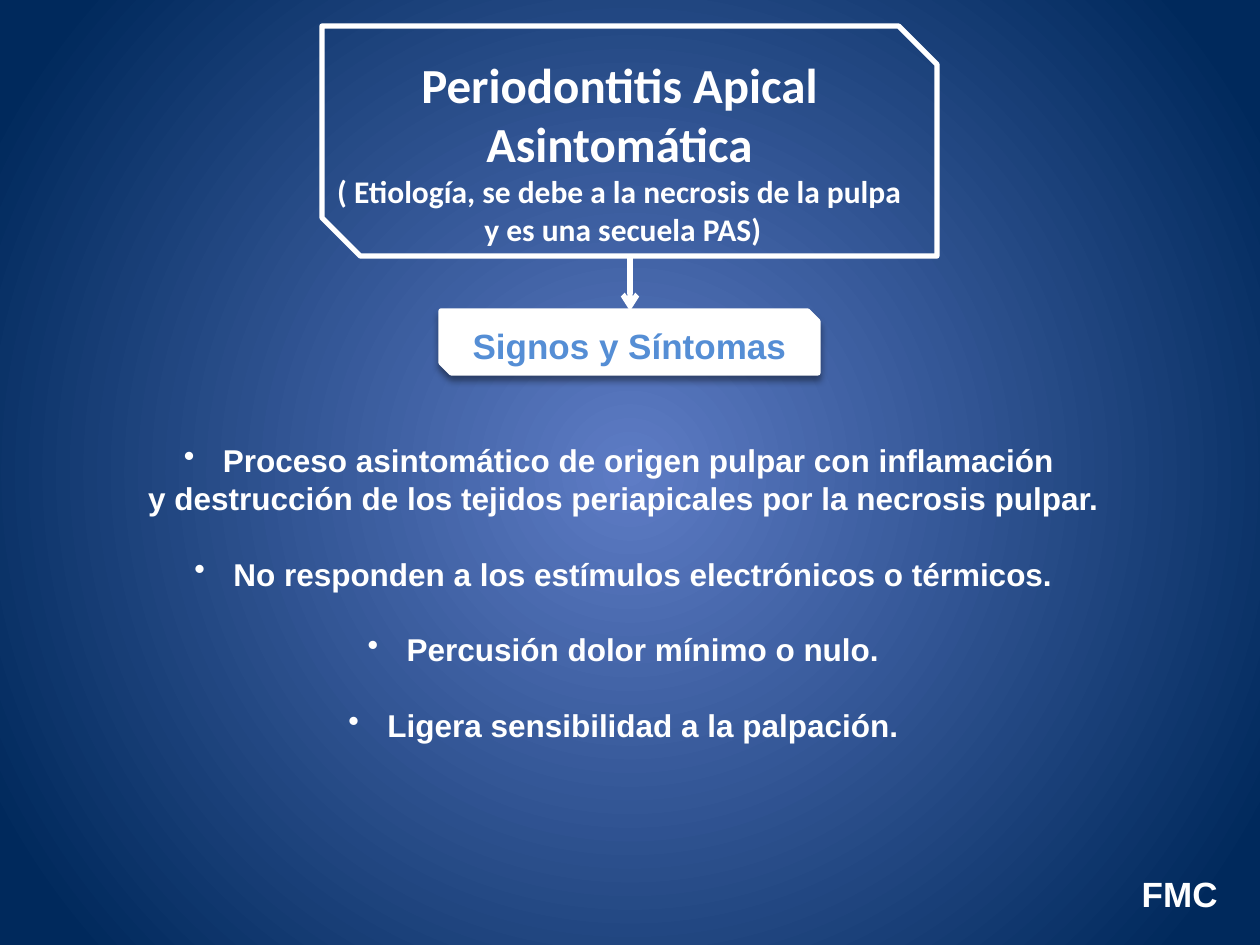
from lxml import etree
from pptx import Presentation
from pptx import util as u
from pptx.dml.color import RGBColor
from pptx.enum import shapes, text
from pptx.oxml import parse_xml
from pptx.oxml.ns import nsdecls, qn

WHITE = RGBColor(0xFF, 0xFF, 0xFF)
SKY = RGBColor(0x55, 0x8E, 0xD5)
GLOW = RGBColor(0x5E, 0x7C, 0xC5)
NAVY = RGBColor(0x00, 0x29, 0x5C)
PX_PER_INCH = 126
BULLET_INDENT = 39

CENTER = text.PP_ALIGN.CENTER
RIGHT = text.PP_ALIGN.RIGHT


def px(n):
    return u.Emu(round(n * u.Inches(1) / PX_PER_INCH))


class Deck:
    font = "Arial"
    color = WHITE
    line_width = u.Pt(3)

    def __init__(self, width, height):
        self.prs = Presentation()
        self.prs.slide_width, self.prs.slide_height = px(width), px(height)
        self.s = self.prs.slides.add_slide(self.prs.slide_layouts[6])

    def background(self, inner, outer, reach):
        fill = self.s.background.fill
        fill.gradient()
        for stop, color, position in zip(fill.gradient_stops, (inner, outer), (0, reach)):
            stop.color.rgb = color
            stop.position = position
        grad = self.s.background._cSld.find(".//" + qn("a:gradFill"))
        grad.replace(grad.find(qn("a:lin")), parse_xml(
            f'<a:path {nsdecls("a")} path="circle">'
            '<a:fillToRect l="50000" t="50000" r="50000" b="50000"/></a:path>'))

    def card(self, x, y, w, h, fill=None, shadow=False):
        sp = self.s.shapes.add_shape(
            shapes.MSO_SHAPE.SNIP_2_DIAG_RECTANGLE, px(x), px(y), px(w), px(h))
        sp.shadow.inherit = False
        if fill is None:
            sp.fill.background()
        else:
            sp.fill.solid()
            sp.fill.fore_color.rgb = fill
        sp.line.color.rgb = self.color
        sp.line.width = self.line_width
        if shadow:
            effects = sp._element.spPr.find(qn("a:effectLst"))
            effects.append(parse_xml(
                f'<a:outerShdw {nsdecls("a")} blurRad="{u.Pt(4)}" dist="{u.Pt(3)}" '
                'dir="5400000" rotWithShape="0"><a:srgbClr val="000000">'
                '<a:alpha val="40000"/></a:srgbClr></a:outerShdw>'))

    def label(self, x, y, w, h, lines, align=CENTER, font=None, color=None,
              wrap=False, anchor=text.MSO_ANCHOR.TOP):
        tf = self.s.shapes.add_textbox(px(x), px(y), px(w), px(h)).text_frame
        tf.word_wrap = wrap
        tf.vertical_anchor = anchor
        for i, (words, size) in enumerate(lines):
            p = tf.add_paragraph() if i else tf.paragraphs[0]
            p.text = words
            p.alignment = align
            p.font.name = font or self.font
            p.font.size = u.Pt(size)
            p.font.bold = True
            p.font.color.rgb = color or self.color
        return tf

    def bullets(self, x, y, w, h, items, size, leading):
        lines = [(line, size) for item in items for line in item]
        starts = [i == 0 for item in items for i in range(len(item))]
        tf = self.label(x, y, w, h, lines)
        for n, (p, start) in enumerate(zip(tf.paragraphs, starts)):
            p.line_spacing = u.Pt(leading)
            if not start:
                continue
            if n:
                p.space_before = u.Pt(leading)
            pPr = p._p.get_or_add_pPr()
            pPr.set("marL", str(px(BULLET_INDENT)))
            pPr.set("indent", str(-px(BULLET_INDENT)))
            bullet = parse_xml(f'<a:buChar {nsdecls("a")} char="•"/>')
            pPr.insert_element_before(bullet, "a:tabLst", "a:defRPr", "a:extLst")

    def arrow(self, x1, y1, x2, y2):
        cx = self.s.shapes.add_connector(
            shapes.MSO_CONNECTOR.STRAIGHT, px(x1), px(y1), px(x2), px(y2))
        cx.line.color.rgb = self.color
        cx.line.width = self.line_width
        etree.SubElement(cx.line._get_or_add_ln(), qn("a:tailEnd"), type="arrow")
        etree.SubElement(cx._element.spPr, qn("a:effectLst"))


def main():
    deck = Deck(1260, 945)
    deck.background(GLOW, NAVY, 0.92)
    deck.card(441, 311, 377, 62, fill=WHITE, shadow=True)
    deck.card(322, 26, 615, 230)
    deck.label(322, 48, 595, 208, [
        ("Periodontitis Apical", 28),
        ("Asintomática", 28),
        ("( Etiología, se debe a la necrosis de la pulpa", 18),
        (" y es una secuela PAS)", 18),
    ], font="Calibri")
    deck.label(459, 318, 341, 55, [("Signos y Síntomas", 20)], color=SKY)
    deck.label(1120, 869, 110, 50, [("FMC", 20)], align=RIGHT, wrap=True,
               anchor=text.MSO_ANCHOR.MIDDLE)
    deck.bullets(131, 435, 985, 357, [
        ["Proceso asintomático de origen pulpar con inflamación ",
         "y destrucción de los tejidos periapicales por la necrosis pulpar."],
        ["No responden a los estímulos electrónicos o térmicos."],
        ["Percusión dolor mínimo o nulo."],
        ["Ligera sensibilidad a la palpación."],
    ], size=18, leading=21.6)
    deck.arrow(630, 256, 630, 311)
    deck.prs.save("out.pptx")


if __name__ == "__main__":
    main()
